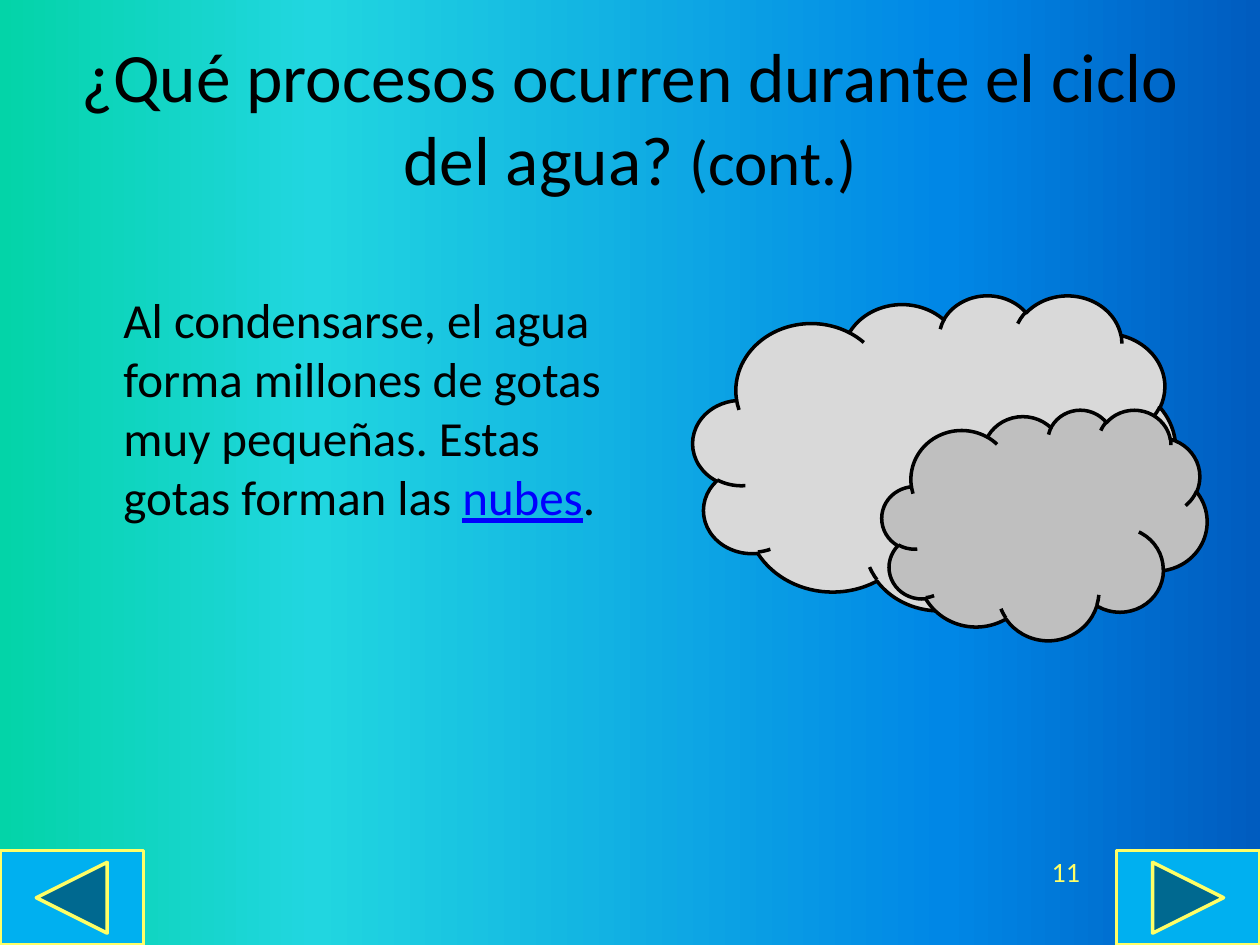
from typing import NamedTuple

from lxml import etree
from pptx import Presentation, util as u
from pptx.dml.color import RGBColor
from pptx.enum import shapes, text
from pptx.oxml.ns import qn

EMU_PER_PX = 9144  # 100 px to the inch
FONT = "Calibri"
BLACK, YELLOW, LINK_BLUE, BUTTON_BLUE = "000000", "FFFF66", "0000FF", "00B0F0"
WATER_GRADIENT = ((0, "03D4A8"), (25, "21D6E0"), (75, "0087E6"), (100, "005CBF"))


class Box(NamedTuple):
    left: int
    top: int
    width: int
    height: int


class Figure(NamedTuple):
    preset: shapes.MSO_SHAPE
    box: Box
    fill: str
    line: str


FIGURES = (
    Figure(shapes.MSO_SHAPE.CLOUD, Box(550, 234, 383, 250), "D9D9D9", BLACK),
    Figure(shapes.MSO_SHAPE.CLOUD, Box(700, 325, 258, 183), "BFBFBF", BLACK),
    Figure(shapes.MSO_SHAPE.ACTION_BUTTON_BACK_OR_PREVIOUS,
           Box(0, 675, 114, 75), BUTTON_BLUE, YELLOW),
    Figure(shapes.MSO_SHAPE.ACTION_BUTTON_FORWARD_OR_NEXT,
           Box(886, 675, 114, 75), BUTTON_BLUE, YELLOW),
)


def px(length: int) -> u.Emu:
    return u.Emu(length * EMU_PER_PX)


def rgb(color: str) -> RGBColor:
    return RGBColor.from_string(color)


def place(shape, box: Box) -> None:
    shape.left, shape.top, shape.width, shape.height = map(px, box)


def set_font(font, size: float, color: str) -> None:
    font.name, font.size = FONT, u.Pt(size)
    font.color.rgb = rgb(color)


def add_run(paragraph, wording: str, size: float, color: str = BLACK):
    run = paragraph.add_run()
    run.text = wording
    set_font(run.font, size, color)
    return run


def paint_background(slide) -> None:
    """Fill the slide from left to right with the four water colours."""
    fill = slide.background.fill
    fill.gradient()
    fill.gradient_angle = 0
    stops = slide.element.find(".//" + qn("a:gsLst"))
    for stop in list(stops):
        stops.remove(stop)
    for percent, color in WATER_GRADIENT:
        stop = etree.SubElement(stops, qn("a:gs"), pos=str(percent * 1000))
        etree.SubElement(stop, qn("a:srgbClr"), val=color)


def add_title(slide) -> None:
    title = slide.shapes.title
    place(title, Box(50, 30, 900, 125))
    frame = title.text_frame
    frame.auto_size = text.MSO_AUTO_SIZE.NONE
    frame.vertical_anchor = text.MSO_ANCHOR.MIDDLE
    heading = frame.paragraphs[0]
    heading.alignment = text.PP_ALIGN.CENTER
    add_run(heading, "¿Qué procesos ocurren durante el ciclo del agua? ", 39.6)
    add_run(heading, "(cont.)", 36)


def add_body(slide) -> None:
    body = slide.placeholders[1]
    place(body, Box(50, 225, 442, 445))
    body.text_frame.auto_size = text.MSO_AUTO_SIZE.NONE
    explanation = body.text_frame.paragraphs[0]
    properties = explanation._p.get_or_add_pPr()
    properties.set("marL", str(px(38)))
    properties.set("indent", "0")
    etree.SubElement(properties, qn("a:buNone"))
    add_run(explanation, "Al condensarse, el agua forma millones de gotas muy "
                         "pequeñas. Estas gotas forman las ", 28)
    add_run(explanation, "nubes", 28, LINK_BLUE).font.underline = True
    add_run(explanation, ".", 28)


def add_figure(slide, figure: Figure) -> None:
    shape = slide.shapes.add_shape(figure.preset, *map(px, figure.box))
    shape.shadow.inherit = False
    shape.fill.solid()
    shape.fill.fore_color.rgb = rgb(figure.fill)
    shape.line.color.rgb = rgb(figure.line)
    shape.line.width = u.Pt(2)


def add_page_number(slide) -> None:
    page_number = slide.shapes.add_textbox(*map(px, Box(767, 675, 100, 33)))
    frame = page_number.text_frame
    frame.word_wrap = True
    frame.vertical_anchor = text.MSO_ANCHOR.MIDDLE
    number = frame.paragraphs[0]
    number.text = "11"
    number.alignment = text.PP_ALIGN.RIGHT
    set_font(number.font, 16, YELLOW)


def main() -> None:
    deck = Presentation()
    deck.slide_width, deck.slide_height = px(1000), px(750)
    slide = deck.slides.add_slide(deck.slide_layouts[1])
    paint_background(slide)
    add_title(slide)
    add_body(slide)
    for figure in FIGURES:
        add_figure(slide, figure)
    add_page_number(slide)
    deck.save("out.pptx")


if __name__ == "__main__":
    main()
